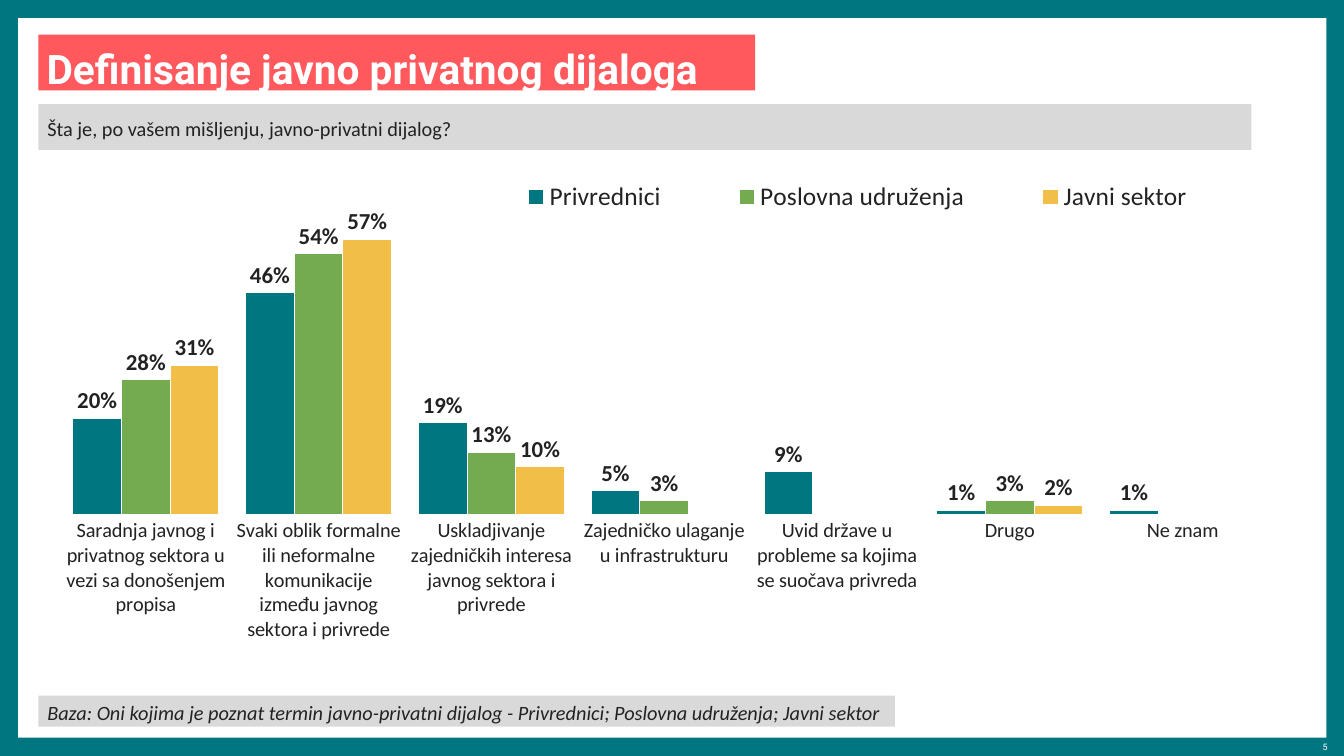
import pptx
import pptx.chart.data
import pptx.dml.color
import pptx.enum.chart
import pptx.enum.shapes
import pptx.enum.text
import pptx.oxml
import pptx.oxml.ns
import pptx.util

Pt = pptx.util.Pt
COLORS = {
    "teal": "007681", "green": "74AA50", "yellow": "F1BE48", "coral": "FF585D",
    "grey": "D9D9D9", "ink": "222223", "white": "FFFFFF",
}
CATEGORIES = [
    "Saradnja javnog i privatnog sektora u vezi sa donošenjem propisa",
    "Svaki oblik formalne ili neformalne komunikacije između javnog sektora i privrede",
    "Uskladjivanje zajedničkih interesa javnog sektora i privrede",
    "Zajedničko ulaganje u infrastrukturu",
    "Uvid države u probleme sa kojima se suočava privreda",
    "Drugo",
    "Ne znam",
]
SERIES = [
    ("Privrednici", "teal", [20, 46, 19, 5, 9, 1, 1]),
    ("Poslovna udruženja", "green", [28, 54, 13, 3, None, 3, None]),
    ("Javni sektor", "yellow", [31, 57, 10, None, None, 2, None]),
]


def rgb(name):
    return pptx.dml.color.RGBColor.from_string(COLORS[name])


def paint(target, name):
    target.fill.solid()
    target.fill.fore_color.rgb = rgb(name)


def style_font(font, size, color="ink", name="Calibri", bold=False, italic=False):
    font.size, font.name = Pt(size), name
    font.bold, font.italic = bold, italic
    font.color.rgb = rgb(color)


def add_panel(page, box, color):
    shape = page.shapes.add_shape(
        pptx.enum.shapes.MSO_SHAPE.RECTANGLE, *map(Pt, box))
    shape.shadow.inherit = False
    paint(shape, color)
    shape.line.fill.background()
    return shape


def write(shape, text, margins, spacing, align="LEFT", wrap=True, **font):
    """Put one formatted paragraph into a shape; margins are left, top, right, bottom."""
    frame = shape.text_frame
    frame.word_wrap = wrap
    frame.vertical_anchor = pptx.enum.text.MSO_ANCHOR.MIDDLE
    frame.margin_left, frame.margin_top, frame.margin_right, frame.margin_bottom = map(
        Pt, margins)
    frame.text = text
    para = frame.paragraphs[0]
    para.alignment = getattr(pptx.enum.text.PP_ALIGN, align)
    para.line_spacing = spacing
    style_font(para.runs[0].font, **font)


def add_title(page, box, text):
    write(add_panel(page, box, "coral"), text, (6.5, 5.8, 6.5, 0), Pt(41),
          wrap=False, size=32, color="white", name="Roboto", bold=True)


def add_strip(page, box, text, italic=False):
    write(add_panel(page, box, "grey"), text, (7.2, 0, 7.2, 0), 1.1,
          size=16, italic=italic)


def add_page_number(page, box, text):
    write(page.shapes.add_textbox(*map(Pt, box)), text, (0, 0, 0, 0), 1.1,
          align="RIGHT", size=7, color="white", name="Roboto")


def manual_layout(x, y, w, h, inner=False):
    target = '<c:layoutTarget val="inner"/>' if inner else ""
    sizes = "".join(f'<c:{key} val="{value}"/>'
                    for key, value in (("x", x), ("y", y), ("w", w), ("h", h)))
    return pptx.oxml.parse_xml(
        f'<c:layout {pptx.oxml.ns.nsdecls("c")}><c:manualLayout>{target}'
        f'<c:xMode val="edge"/><c:yMode val="edge"/>{sizes}'
        '</c:manualLayout></c:layout>')


def place(parent, layout, index):
    for old in parent.xpath("c:layout"):
        parent.remove(old)
    parent.insert(index, layout)


def style_axes(chart):
    enums = pptx.enum.chart
    for axis in (chart.category_axis, chart.value_axis):
        axis.has_major_gridlines = False
        axis.major_tick_mark = axis.minor_tick_mark = enums.XL_TICK_MARK.NONE
        axis.format.line.fill.background()
    style_font(chart.category_axis.tick_labels.font, 16)
    chart.value_axis.tick_label_position = enums.XL_TICK_LABEL_POSITION.NONE
    chart.value_axis.minimum_scale, chart.value_axis.maximum_scale = 0, 60


def style_series(series, color):
    paint(series.format, color)
    series.format.line.color.rgb = rgb("white")
    series.format.line.width = Pt(0.75)
    labels = series.data_labels
    labels.show_value = True
    labels.number_format, labels.number_format_is_linked = '#"%"', False
    labels.position = pptx.enum.chart.XL_LABEL_POSITION.OUTSIDE_END
    style_font(labels.font, 18, bold=True)


def add_answers_chart(page, box):
    data = pptx.chart.data.CategoryChartData()
    data.categories = CATEGORIES
    for name, _, values in SERIES:
        data.add_series(name, values)
    chart = page.shapes.add_chart(
        pptx.enum.chart.XL_CHART_TYPE.COLUMN_CLUSTERED, *map(Pt, box), data).chart
    chart.has_title = False
    style_font(chart.font, 18, name="Roboto")
    style_axes(chart)

    plot = chart.plots[0]
    plot.gap_width, plot.overlap, plot.vary_by_categories = 55, 0, False
    for series, (_, color, _) in zip(plot.series, SERIES):
        style_series(series, color)

    chart.has_legend = True
    chart.legend.position = pptx.enum.chart.XL_LEGEND_POSITION.RIGHT
    chart.legend.include_in_layout = False
    style_font(chart.legend.font, 20)
    root = chart.element
    place(root.xpath("c:chart/c:plotArea")[0],
          manual_layout(0, 0.12, 1, 0.57, inner=True), 0)
    place(root.xpath("c:chart/c:legend")[0],
          manual_layout(0.33, 0.03, 0.66, 0.07), 1)


def main():
    deck = pptx.Presentation()
    deck.slide_width, deck.slide_height = Pt(1058.4), Pt(595.4)
    page = deck.slides.add_slide(deck.slide_layouts[6])
    paint(page.background, "teal")
    add_panel(page, (14.2, 14.2, 1030.3, 566.8), "white")
    add_page_number(page, (988.6, 583.2, 56.9, 9.4), "5")
    add_title(page, (30.2, 27.2, 564.5, 44), "Definisanje javno privatnog dijaloga")
    add_strip(page, (30.2, 547.8, 674.6, 24.4),
              "Baza: Oni kojima je poznat termin javno-privatni dijalog - Privrednici; "
              "Poslovna udruženja; Javni sektor", italic=True)
    add_answers_chart(page, (46.8, 128.9, 952.6, 401))
    add_strip(page, (30.2, 82.1, 955.4, 36),
              "Šta je, po vašem mišljenju, javno-privatni dijalog?")
    deck.save("out.pptx")


if __name__ == "__main__":
    main()
